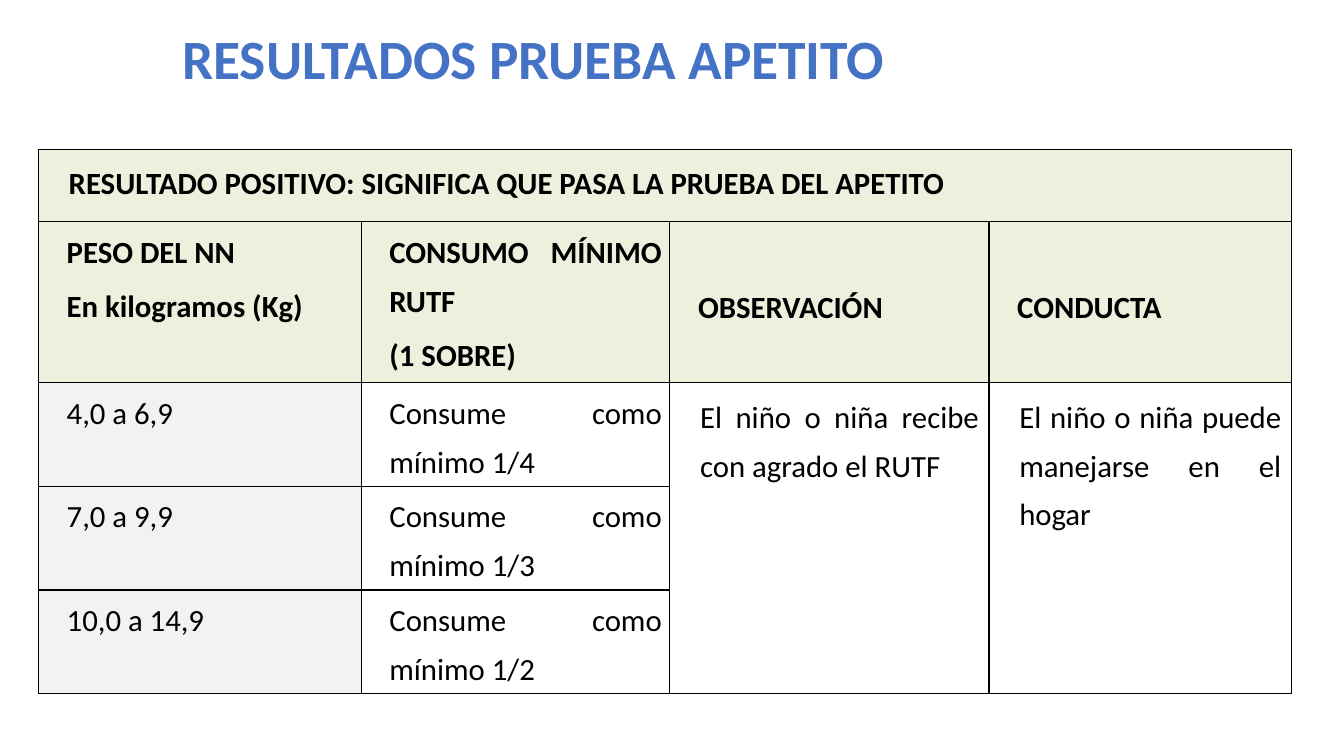
from lxml.etree import SubElement
from pptx import Presentation
from pptx.dml.color import RGBColor
from pptx.enum.text import MSO_ANCHOR as ANCHOR, MSO_AUTO_SIZE as AUTO, PP_ALIGN as ALIGN
from pptx.oxml.ns import qn
from pptx.util import Pt

COLORS = {"title": "4472C4", "text": "000000", "border": "000000",
          "header": "EBF1DD", "weight": "F2F2F2"}
WIDE = (7.2, 3.6, 7.2, 3.6)
TIGHT = (5.76, 0.72, 5.76, 0)


class Deck:
    font = "Calibri"
    indent = Pt(14.4)

    def __init__(self, width, height):
        self.prs = Presentation()
        self.prs.slide_width, self.prs.slide_height = Pt(width), Pt(height)
        self.s = self.prs.slides.add_slide(self.prs.slide_layouts[5])

    def style(self, p, size, color, bold):
        for r in p.runs:
            f = r.font
            f.name, f.size, f.bold = self.font, Pt(size), bold
            f.color.rgb = RGBColor.from_string(COLORS[color])

    def title(self, text, left, top, width, height):
        sp = self.s.shapes.title
        sp.left, sp.top, sp.width, sp.height = map(Pt, (left, top, width, height))
        tf = sp.text_frame
        tf.text = text
        tf.word_wrap, tf.auto_size = True, AUTO.NONE
        tf.vertical_anchor = ANCHOR.MIDDLE
        p = tf.paragraphs[0]
        p.alignment, p.line_spacing = ALIGN.LEFT, 0.9
        self.style(p, 39.6, "title", True)

    def table(self, left, top, widths, heights):
        frame = self.s.shapes.add_table(len(heights), len(widths), Pt(left), Pt(top),
                                        Pt(sum(widths)), Pt(sum(heights)))
        tbl = frame.table
        tbl.first_row = tbl.horz_banding = False
        for col, width in zip(tbl.columns, widths):
            col.width = Pt(width)
        for row, height in zip(tbl.rows, heights):
            row.height = Pt(height)
        for cell in tbl.iter_cells():
            self.borders(cell)
            cell.fill.background()
        return tbl

    def borders(self, cell):
        tcPr = cell._tc.get_or_add_tcPr()
        for side in ("lnL", "lnR", "lnT", "lnB"):
            ln = SubElement(tcPr, qn(f"a:{side}"), w=str(Pt(1)))
            fill = SubElement(ln, qn("a:solidFill"))
            SubElement(fill, qn("a:srgbClr"), val=COLORS["border"])

    def cell(self, cell, text, fill=None, bold=False, margins=TIGHT, anchor=ANCHOR.TOP):
        (cell.margin_left, cell.margin_top,
         cell.margin_right, cell.margin_bottom) = map(Pt, margins)
        cell.vertical_anchor = anchor
        if fill:
            cell.fill.solid()
            cell.fill.fore_color.rgb = RGBColor.from_string(COLORS[fill])
        cell.text_frame.text = text
        for p in cell.text_frame.paragraphs:
            p._p.get_or_add_pPr().set("marL", str(self.indent))
            p.alignment, p.line_spacing, p.space_after = ALIGN.JUSTIFY, 1.3, Pt(4)
            self.style(p, 22, "text", bold)


def main():
    deck = Deck(960, 540)
    deck.title("RESULTADOS PRUEBA APETITO", 123, 19.5, 792, 49)

    # Table grid and merged areas
    tbl = deck.table(27.5, 106.5, (230.5, 220.5, 228, 216), (52, 115, 74, 74, 74))
    tbl.cell(0, 0).merge(tbl.cell(0, 3))
    for c in (2, 3):
        tbl.cell(2, c).merge(tbl.cell(4, c))

    # Headings
    deck.cell(tbl.cell(0, 0), "RESULTADO POSITIVO: SIGNIFICA QUE PASA LA PRUEBA DEL APETITO",
              "header", True, WIDE)
    headings = (("PESO DEL NN\nEn kilogramos (Kg)", ANCHOR.TOP),
                ("CONSUMO MÍNIMO RUTF\n(1 SOBRE)", ANCHOR.TOP),
                ("OBSERVACIÓN", ANCHOR.MIDDLE),
                ("CONDUCTA", ANCHOR.MIDDLE))
    for c, (text, anchor) in enumerate(headings):
        deck.cell(tbl.cell(1, c), text, "header", True, anchor=anchor)

    # Weight ranges and minimum intake
    intakes = (("4,0 a 6,9", "1/4"), ("7,0 a 9,9", "1/3"), ("10,0 a 14,9", "1/2"))
    for row, (weight, share) in enumerate(intakes, 2):
        deck.cell(tbl.cell(row, 0), weight, "weight")
        deck.cell(tbl.cell(row, 1), f"Consume como mínimo {share}")

    # Observation and conduct
    deck.cell(tbl.cell(2, 2), "El niño o niña recibe con agrado el RUTF", margins=WIDE)
    deck.cell(tbl.cell(2, 3), "El niño o niña puede manejarse en el hogar", margins=WIDE)

    deck.prs.save("out.pptx")


if __name__ == "__main__":
    main()
